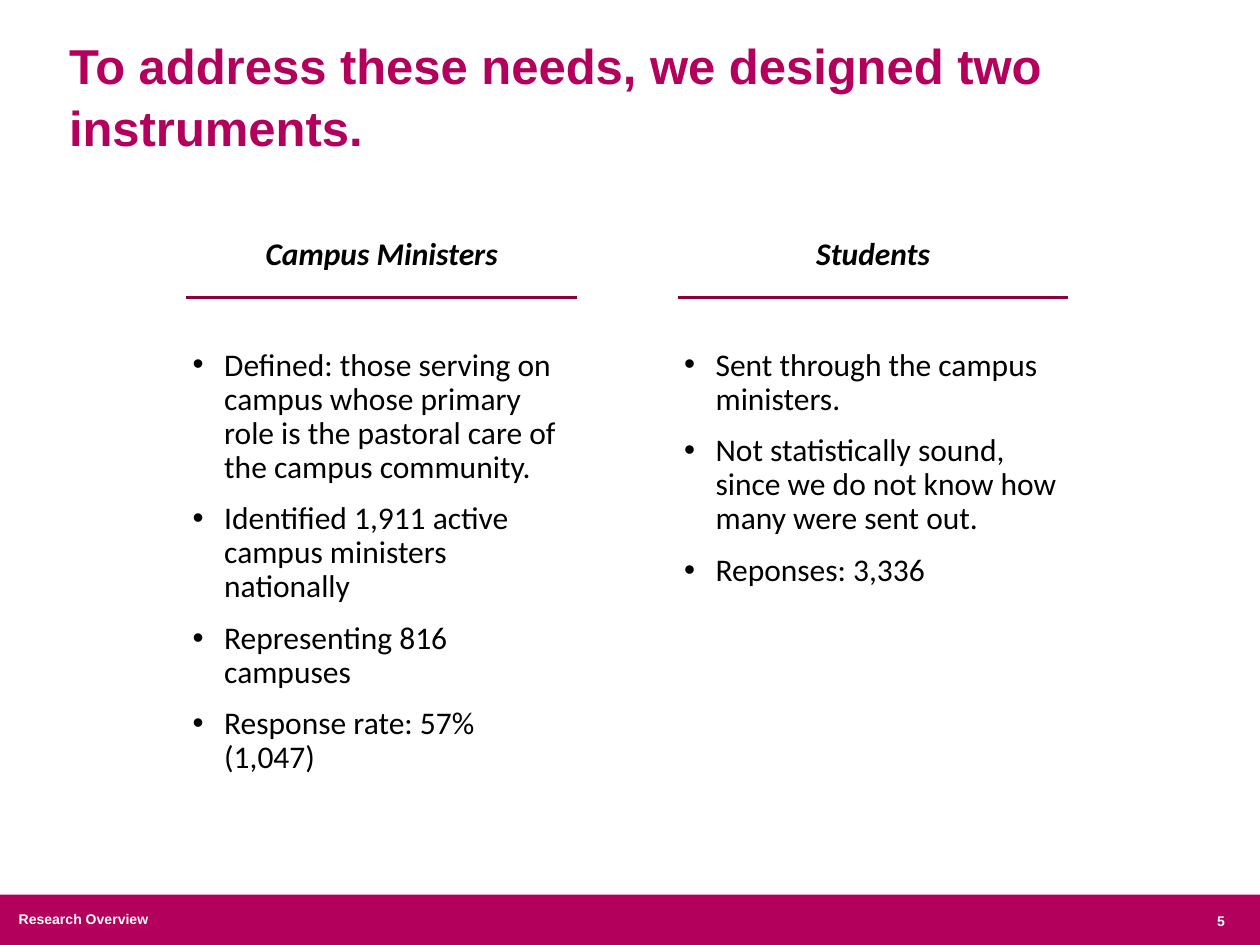
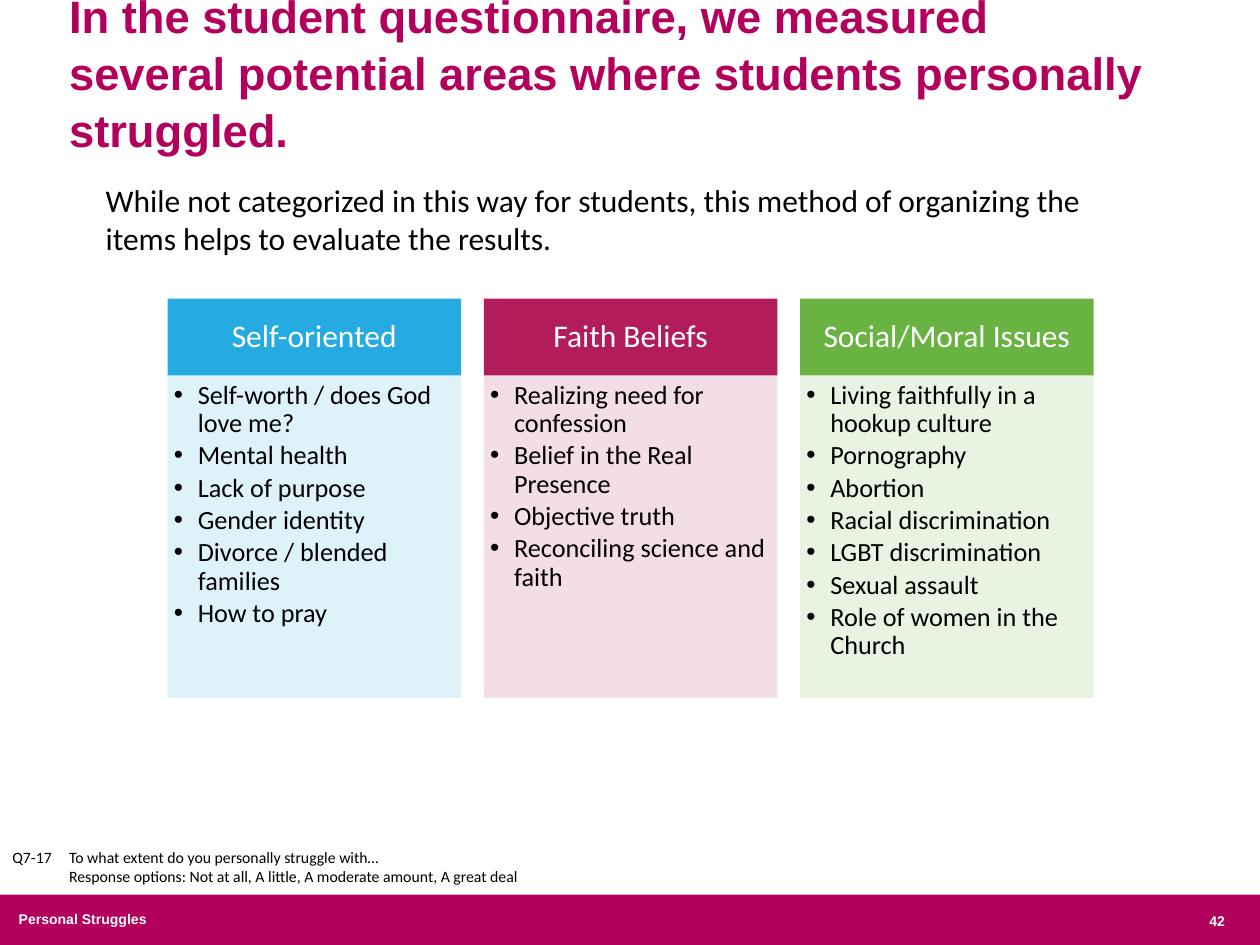
from dataclasses import dataclass

from lxml.etree import SubElement
from pptx import Presentation
from pptx.dml.color import RGBColor
from pptx.enum.shapes import MSO_CONNECTOR as Connector, MSO_SHAPE as Shape
from pptx.enum.text import MSO_ANCHOR as Anchor, PP_ALIGN as Align
from pptx.oxml.ns import qn
from pptx.util import Inches, Pt

INSTRUMENTS = {
    "section": "Research Overview",
    "number": "5",
    "title": "To address these needs, we designed two instruments.",
    "columns": [
        ("Campus Ministers", [
            "Defined: those serving on campus whose primary role is the pastoral care "
            "of the campus community.",
            "Identified 1,911 active campus ministers nationally",
            "Representing 816 campuses",
            "Response rate: 57% (1,047)",
        ]),
        ("Students", [
            "Sent through the campus ministers.",
            "Not statistically sound, since we do not know how many were sent out.",
            "Reponses: 3,336",
        ]),
    ],
}

STRUGGLES = {
    "section": "Personal Struggles",
    "number": "42",
    "title": "In the student questionnaire, we measured several potential areas "
             "where students personally struggled.",
    "intro": "While not categorized in this way for students, this method of "
             "organizing the items helps to evaluate the results.",
    "areas": [
        ("Self-oriented", "25AAE1", [
            "Self-worth / does God love me?", "Mental health", "Lack of purpose",
            "Gender identity", "Divorce / blended families", "How to pray",
        ]),
        ("Faith Beliefs", "B31C5B", [
            "Realizing need for confession", "Belief in the Real Presence",
            "Objective truth", "Reconciling science and faith",
        ]),
        ("Social/Moral Issues", "69B342", [
            "Living faithfully in a hookup culture", "Pornography", "Abortion",
            "Racial discrimination", "LGBT discrimination", "Sexual assault",
            "Role of women in the Church",
        ]),
    ],
    "question": "Q7-17\tTo what extent do you personally struggle with…\v"
                "Response options: Not at all, A little, A moderate amount, A great deal",
}


@dataclass(frozen=True)
class Theme:
    brand: str = "B2005C"
    rule: str = "8D003F"
    ink: str = "000000"
    paper: str = "FFFFFF"
    display: str = "Arial"
    body: str = "Calibri"
    title_size: float = 28
    long_title_size: float = 25.9
    text_size: float = 18
    item_size: float = 15
    note_size: float = 9
    footer_size: float = 8


THEME = Theme()
MARGINS = (0.1, 0.05, 0.1, 0.05)
TIGHT = (0.05, 0.05, 0.05, 0.05)


def write(shape, text, *, size=THEME.text_size, font=THEME.body, color=THEME.ink,
          bold=False, italic=False, align=Align.LEFT, anchor=Anchor.TOP,
          margins=MARGINS, hanging=0, bullet=False, line=1.0, before=0, after=0):
    """Fill a shape with one paragraph, or one for each entry of a list."""
    frame = shape.text_frame
    frame.word_wrap = True
    frame.vertical_anchor = anchor
    (frame.margin_left, frame.margin_top,
     frame.margin_right, frame.margin_bottom) = map(Inches, margins)
    for index, entry in enumerate([text] if isinstance(text, str) else text):
        paragraph = frame.add_paragraph() if index else frame.paragraphs[0]
        paragraph.text = entry
        properties = paragraph._p.get_or_add_pPr()
        if hanging:
            properties.set("marL", str(Inches(hanging)))
            properties.set("indent", str(-Inches(hanging)))
        if bullet:
            SubElement(properties, qn("a:buFont"), typeface="Arial")
            SubElement(properties, qn("a:buChar"), char="•")
        paragraph.alignment = align
        paragraph.line_spacing = line
        if index and before:
            paragraph.space_before = Pt(before)
        paragraph.space_after = Pt(after)
        for run in paragraph.runs:
            run.font.size, run.font.name = Pt(size), font
            run.font.bold, run.font.italic = bold, italic
            run.font.color.rgb = RGBColor.from_string(color)


def add_text(slide, box, text, **style):
    write(slide.shapes.add_textbox(*map(Inches, box)), text, **style)


def add_panel(slide, box, color, opacity=100):
    panel = slide.shapes.add_shape(Shape.RECTANGLE, *map(Inches, box))
    panel.shadow.inherit = False
    panel.line.fill.background()
    panel.fill.solid()
    panel.fill.fore_color.rgb = RGBColor.from_string(color)
    if opacity < 100:
        fill_color = panel._element.spPr.find(qn("a:solidFill"))[0]
        SubElement(fill_color, qn("a:alpha"), val=str(opacity * 1000))
    return panel


def add_rule(slide, left, top, width):
    rule = slide.shapes.add_connector(
        Connector.STRAIGHT, *map(Inches, (left, top, left + width, top)))
    rule.line.color.rgb = RGBColor.from_string(THEME.rule)
    rule.line.width = Pt(1.5)
    SubElement(rule._element.spPr, qn("a:effectLst"))


def start_slide(deck, content, title_size):
    """Add a slide with the shared footer band, section, number and title."""
    slide = deck.slides.add_slide(deck.slide_layouts[6])
    add_panel(slide, (0, 7.1, 10, 0.4), THEME.brand)
    footer = dict(size=THEME.footer_size, font=THEME.display, color=THEME.paper, bold=True)
    add_text(slide, (0.05, 7.18, 3.94, 0.24), content["section"], **footer)
    add_text(slide, (5.88, 7.19, 3.94, 0.24), content["number"], align=Align.RIGHT, **footer)
    add_text(slide, (0.45, 0.11, 8.8, 1.18), content["title"], size=title_size,
             font=THEME.display, color=THEME.brand, bold=True, anchor=Anchor.BOTTOM,
             line=1.05)
    return slide


def build_instruments(deck):
    slide = start_slide(deck, INSTRUMENTS, THEME.title_size)
    first_left, width, gap = 1.48, 3.1, 0.8
    for index, (audience, facts) in enumerate(INSTRUMENTS["columns"]):
        left = first_left + index * (width + gap)
        add_text(slide, (left, 1.81, width, 0.4), audience, bold=True, italic=True,
                 align=Align.CENTER)
        add_rule(slide, left, 2.36, width)
        add_text(slide, (left, 2.72, width, 3.55), facts, margins=TIGHT, hanging=0.25,
                 bullet=True, line=0.9, before=10)


def build_struggles(deck):
    slide = start_slide(deck, STRUGGLES, THEME.long_title_size)
    add_text(slide, (0.74, 1.39, 8.52, 0.71), STRUGGLES["intro"])
    first_left, width, gap = 1.33, 2.33, 0.18
    top, heading_height, list_height = 2.37, 0.61, 2.56
    for index, (area, color, items) in enumerate(STRUGGLES["areas"]):
        left = first_left + index * (width + gap)
        heading = add_panel(slide, (left, top, width, heading_height), color)
        write(heading, area, color=THEME.paper, align=Align.CENTER, anchor=Anchor.MIDDLE,
              margins=(0.15, 0.11, 0.15, 0.11), line=0.9)
        item_list = add_panel(
            slide, (left, top + heading_height, width, list_height), color, opacity=15)
        write(item_list, items, size=THEME.item_size, margins=TIGHT, hanging=0.19,
              bullet=True, line=0.9, after=2.25)
    add_text(slide, (0, 6.68, 4.98, 0.4), STRUGGLES["question"], size=THEME.note_size,
             hanging=0.45)


def main():
    deck = Presentation()
    deck.slide_width, deck.slide_height = Inches(10), Inches(7.5)
    build_instruments(deck)
    build_struggles(deck)
    deck.save("out.pptx")


if __name__ == "__main__":
    main()
